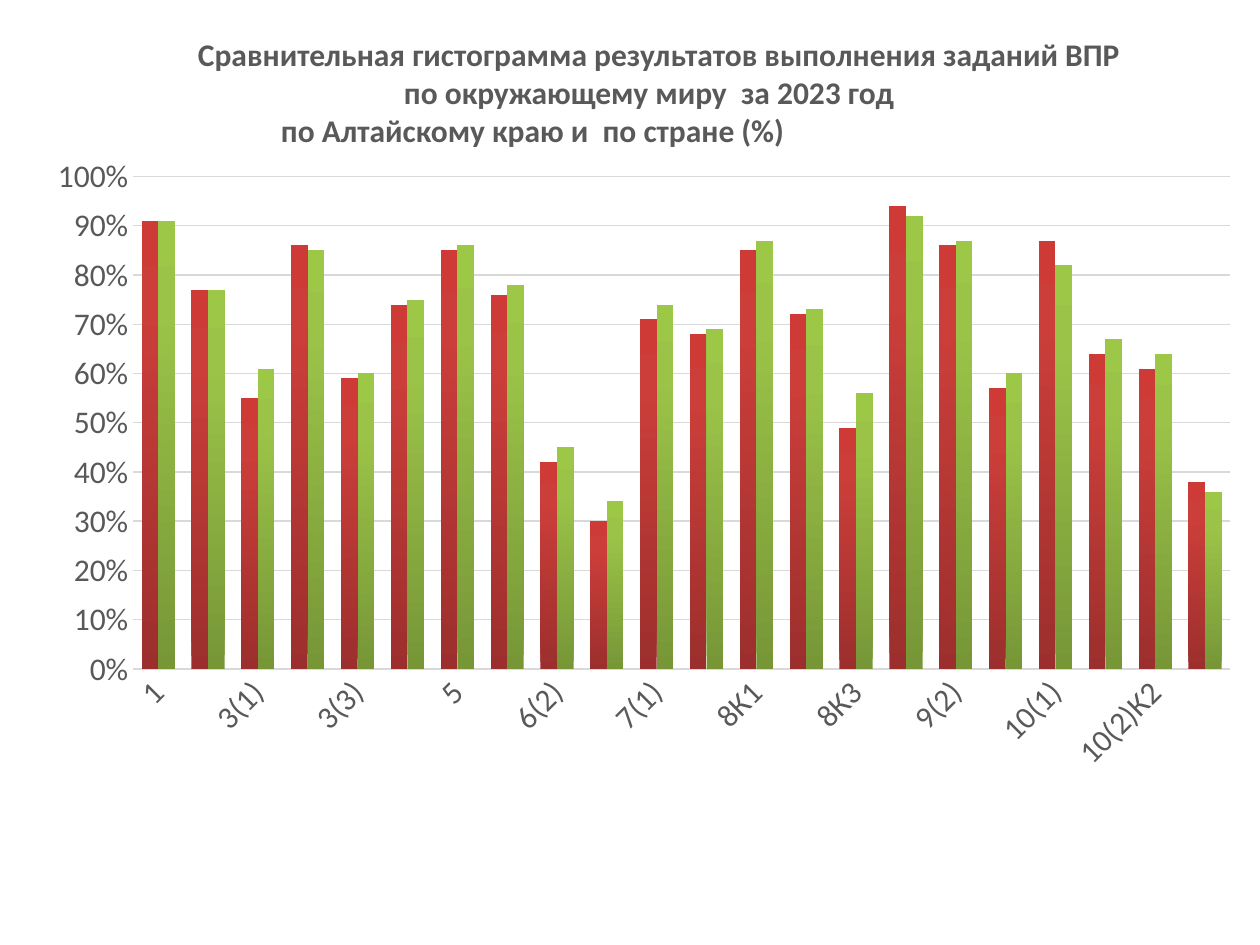
"""Build a slide with a column chart comparing regional and national test results."""
import copy

import pptx
import pptx.chart.data
import pptx.dml.color
import pptx.enum.chart
import pptx.enum.text
import pptx.oxml
import pptx.oxml.ns
import pptx.util

EMU_PER_PX = 914400 // 126
SLIDE_SIZE = (1260, 945)
CHART_BOX = (15, 18, 1245, 922)
TITLE_BOX = (198, 35, 1000, 115)
PLOT = {"x": 0.095, "y": 0.172, "w": 0.881, "h": 0.534}
FONT = "Calibri"
GRAY = "595959"
RULE = "D9D9D9"

TITLE_LINES = [
    ("Сравнительная гистограмма результатов выполнения заданий ВПР", 0),
    ("по окружающему миру  за 2023 год", 206),
    ("по Алтайскому краю и  по стране (%)", 83),
]
TASKS = [
    "1", "2", "3(1)", "3(2)", "3(3)", "4", "5", "6(1)", "6(2)", "6(3)", "7(1)",
    "7(2)", "8К1", "8К2", "8К3", "9(1)", "9(2)", "9(3)", "10(1)", "10(2)К1",
    "10(2)К2", "10(2)К3",
]
SERIES = [
    ("Series 1",
     [0.91, 0.77, 0.55, 0.86, 0.59, 0.74, 0.85, 0.76, 0.42, 0.3, 0.71,
      0.68, 0.85, 0.72, 0.49, 0.94, 0.86, 0.57, 0.87, 0.64, 0.61, 0.38],
     [(0, "9C2F2D"), (0.8, "CB3E3A"), (1, "CE3B37")]),
    ("Series 2",
     [0.91, 0.77, 0.61, 0.85, 0.6, 0.75, 0.86, 0.78, 0.45, 0.34, 0.74,
      0.69, 0.87, 0.73, 0.56, 0.92, 0.87, 0.6, 0.82, 0.67, 0.64, 0.36],
     [(0, "779737"), (0.8, "9BC348"), (1, "9DC746")]),
]


def px(length):
    return pptx.util.Emu(length * EMU_PER_PX)


def color(value):
    return pptx.dml.color.RGBColor.from_string(value)


def style_font(font, bold=False):
    font.name = FONT
    font.size = pptx.util.Pt(18)
    font.bold = bold
    font.color.rgb = color(GRAY)


def style_line(line, width):
    line.color.rgb = color(RULE)
    line.width = pptx.util.Pt(width)


def add_title(slide):
    box = slide.shapes.title
    box.left, box.top, box.width, box.height = map(px, TITLE_BOX)
    frame = box.text_frame
    frame.word_wrap = True
    frame.auto_size = pptx.enum.text.MSO_AUTO_SIZE.NONE
    frame.vertical_anchor = pptx.enum.text.MSO_ANCHOR.TOP
    frame.margin_left = frame.margin_right = 0
    frame.margin_top = frame.margin_bottom = 0
    for index, (text, indent) in enumerate(TITLE_LINES):
        para = frame.add_paragraph() if index else frame.paragraphs[0]
        para.alignment = pptx.enum.text.PP_ALIGN.LEFT
        para.space_before = pptx.util.Pt(0)
        properties = para._p.get_or_add_pPr()
        properties.set("marL", str(px(indent)))
        properties.set("indent", "0")
        span = para.add_run()
        span.text = text
        style_font(span.font, bold=True)


def fill_gradient(series, stops):
    fill = series.format.fill
    fill.gradient()
    fill.gradient_angle = 90
    stop_list = series._element.find(".//" + pptx.oxml.ns.qn("a:gsLst"))
    while len(stop_list) < len(stops):
        stop_list.append(copy.deepcopy(stop_list[0]))
    for stop, (position, value) in zip(fill.gradient_stops, stops):
        stop.position = position
        stop.color.rgb = color(value)


def place_plot(chart):
    modes = "".join(f'<c:{side}Mode val="edge"/>' for side in "xy")
    sizes = "".join(f'<c:{key} val="{value}"/>' for key, value in PLOT.items())
    layout = pptx.oxml.parse_xml(
        f'<c:layout {pptx.oxml.ns.nsdecls("c")}><c:manualLayout>'
        f'<c:layoutTarget val="inner"/>{modes}{sizes}</c:manualLayout></c:layout>')
    area = chart._chartSpace.chart.plotArea
    for old in area.findall(pptx.oxml.ns.qn("c:layout")):
        area.remove(old)
    area.insert(0, layout)


def style_axes(chart):
    tasks, shares = chart.category_axis, chart.value_axis
    for axis in (tasks, shares):
        axis.major_tick_mark = pptx.enum.chart.XL_TICK_MARK.NONE
        axis.minor_tick_mark = pptx.enum.chart.XL_TICK_MARK.NONE
        style_font(axis.tick_labels.font)
    style_line(tasks.format.line, 1)
    body = tasks._element.find(".//" + pptx.oxml.ns.qn("a:bodyPr"))
    body.set("rot", "-2700000")
    body.set("vert", "horz")
    shares.minimum_scale, shares.maximum_scale, shares.major_unit = 0, 1, 0.1
    shares.format.line.fill.background()
    shares.has_major_gridlines = True
    style_line(shares.major_gridlines.format.line, 0.75)
    shares.tick_labels.number_format = "0%"
    shares.tick_labels.number_format_is_linked = False


def add_chart(slide):
    data = pptx.chart.data.CategoryChartData(number_format="0%")
    data.categories = TASKS
    for name, values, _ in SERIES:
        data.add_series(name, values)
    kind = pptx.enum.chart.XL_CHART_TYPE.COLUMN_CLUSTERED
    chart = slide.shapes.add_chart(kind, *map(px, CHART_BOX), data).chart
    chart.has_title = False
    chart.has_legend = False
    chart.font.name = FONT
    chart.font.size = pptx.util.Pt(10)
    plot = chart.plots[0]
    plot.gap_width = 100
    plot.overlap = 0
    plot.vary_by_categories = False
    for series, (_, _, stops) in zip(plot.series, SERIES):
        fill_gradient(series, stops)
    style_axes(chart)
    place_plot(chart)


def main():
    deck = pptx.Presentation()
    deck.slide_width, deck.slide_height = map(px, SLIDE_SIZE)
    slide = deck.slides.add_slide(deck.slide_layouts[5])
    add_title(slide)
    add_chart(slide)
    deck.save("out.pptx")


if __name__ == "__main__":
    main()
